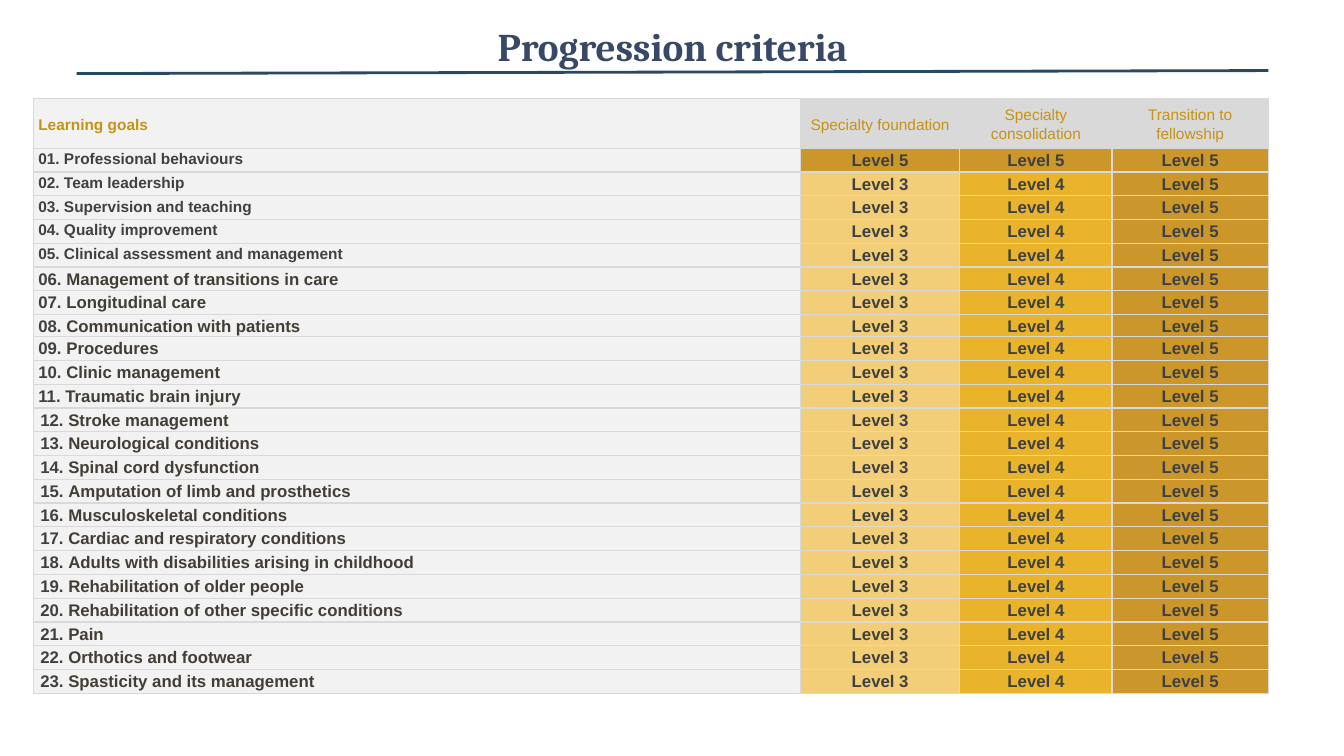
from dataclasses import dataclass

from lxml.etree import SubElement
from pptx import Presentation
from pptx.dml.color import RGBColor
from pptx.enum.shapes import MSO_CONNECTOR
from pptx.enum.text import MSO_ANCHOR, MSO_AUTO_SIZE, PP_ALIGN
from pptx.oxml.ns import qn
from pptx.slide import Slide
from pptx.table import _Cell
from pptx.text.text import _Paragraph
from pptx.util import Inches, Pt

GOLD = "C69214"
CHARCOAL = "404040"
BROWN = "433E35"
PALE = "F2F2F2"
GREY = "D9D9D9"
LEVEL_FILLS = {3: "F1CE77", 4: "E9B32B", 5: "CB972B"}

STAGES = ["Specialty foundation", "Specialty consolidation", "Transition to fellowship"]
GOALS = [
    "Professional behaviours",
    "Team leadership",
    "Supervision and teaching",
    "Quality improvement",
    "Clinical assessment and management",
    "Management of transitions in care",
    "Longitudinal care",
    "Communication with patients",
    "Procedures",
    "Clinic management",
    "Traumatic brain injury",
    "Stroke management",
    "Neurological conditions",
    "Spinal cord dysfunction",
    "Amputation of limb and prosthetics",
    "Musculoskeletal conditions",
    "Cardiac and respiratory conditions",
    "Adults with disabilities arising in childhood",
    "Rehabilitation of older people",
    "Rehabilitation of other specific conditions",
    "Pain",
    "Orthotics and footwear",
    "Spasticity and its management",
]
COLUMN_WIDTHS = [7.61, 1.58, 1.51, 1.55]
TABLE_HEIGHT = 5.9
HEADER_HEIGHT = 0.49
SHORT_ROW, SHORT_HEIGHT = 8, 0.22
ROW_HEIGHT = (TABLE_HEIGHT - HEADER_HEIGHT - SHORT_HEIGHT) / (len(GOALS) - 1)


@dataclass
class Span:
    text: str
    size: int
    color: str
    bold: bool = True
    font: str = "Arial"


@dataclass
class CellStyle:
    fill: str
    align: PP_ALIGN = PP_ALIGN.LEFT
    anchor: MSO_ANCHOR = MSO_ANCHOR.TOP
    margin: float = 0.05


def rgb(color: str) -> RGBColor:
    return RGBColor.from_string(color)


def add_spans(para: _Paragraph, spans: list[Span]) -> None:
    for span in spans:
        run = para.add_run()
        run.text = span.text
        run.font.name = span.font
        run.font.size = Pt(span.size)
        run.font.bold = span.bold
        run.font.color.rgb = rgb(span.color)


def add_borders(cell: _Cell) -> None:
    properties = cell._tc.get_or_add_tcPr()
    for side in ("a:lnL", "a:lnR", "a:lnT", "a:lnB"):
        line = SubElement(properties, qn(side), w=str(Pt(1)))
        fill = SubElement(line, qn("a:solidFill"))
        SubElement(fill, qn("a:srgbClr"), val=GREY)


def fill_cell(cell: _Cell, style: CellStyle, spans: list[Span]) -> None:
    add_borders(cell)
    cell.fill.solid()
    cell.fill.fore_color.rgb = rgb(style.fill)
    cell.vertical_anchor = style.anchor
    cell.margin_left = cell.margin_right = Inches(style.margin)
    cell.margin_top = cell.margin_bottom = 0
    para = cell.text_frame.paragraphs[0]
    para.alignment = style.align
    para.line_spacing = 1.15
    add_spans(para, spans)


def add_title(page: Slide) -> None:
    title = page.shapes.title
    title.left, title.top = Inches(2.17), Inches(0.17)
    title.width, title.height = Inches(9), Inches(1.25)
    frame = title.text_frame
    frame.auto_size = MSO_AUTO_SIZE.NONE
    frame.vertical_anchor = MSO_ANCHOR.TOP
    para = frame.paragraphs[0]
    para.alignment = PP_ALIGN.CENTER
    add_spans(para, [Span("Progression criteria", 28, "384967", font="Cambria")])


def add_rule(page: Slide) -> None:
    rule = page.shapes.add_connector(
        MSO_CONNECTOR.STRAIGHT, Inches(0.76), Inches(0.73), Inches(12.58), Inches(0.7)
    )
    rule.line.color.rgb = rgb("294864")
    rule.line.width = Pt(2)
    SubElement(rule._element.spPr, qn("a:effectLst"))


def add_criteria(page: Slide) -> None:
    table = page.shapes.add_table(
        len(GOALS) + 1, len(COLUMN_WIDTHS),
        Inches(0.33), Inches(0.98), Inches(sum(COLUMN_WIDTHS)), Inches(TABLE_HEIGHT),
    ).table
    table.first_row = table.horz_banding = False
    for column, width in zip(table.columns, COLUMN_WIDTHS):
        column.width = Inches(width)

    table.rows[0].height = Inches(HEADER_HEIGHT)
    goal_header = CellStyle(PALE, anchor=MSO_ANCHOR.MIDDLE)
    stage_header = CellStyle(GREY, PP_ALIGN.CENTER, MSO_ANCHOR.MIDDLE)
    fill_cell(table.cell(0, 0), goal_header, [Span("Learning goals", 11, GOLD)])
    for column, stage in enumerate(STAGES, 1):
        fill_cell(table.cell(0, column), stage_header, [Span(stage, 11, GOLD, bold=False)])

    for number, goal in enumerate(GOALS, 1):
        height = SHORT_HEIGHT if number == SHORT_ROW else ROW_HEIGHT
        table.rows[number].height = Inches(height)
        size, color = (11, CHARCOAL) if number <= 5 else (12, BROWN)
        goal_style = CellStyle(PALE, margin=0.05 if number < 12 else 0.07)
        spans = [Span(f"{number:02}. ", size, CHARCOAL), Span(goal, size, color)]
        fill_cell(table.cell(number, 0), goal_style, spans)
        levels = (5, 5, 5) if number == 1 else (3, 4, 5)
        for column, level in enumerate(levels, 1):
            level_style = CellStyle(LEVEL_FILLS[level], PP_ALIGN.CENTER)
            fill_cell(table.cell(number, column), level_style, [Span(f"Level {level}", 12, CHARCOAL)])


def main() -> None:
    deck = Presentation()
    deck.slide_width, deck.slide_height = Inches(13.33), Inches(7.5)
    page = deck.slides.add_slide(deck.slide_layouts[5])
    add_title(page)
    add_rule(page)
    add_criteria(page)
    deck.save("out.pptx")


if __name__ == "__main__":
    main()
